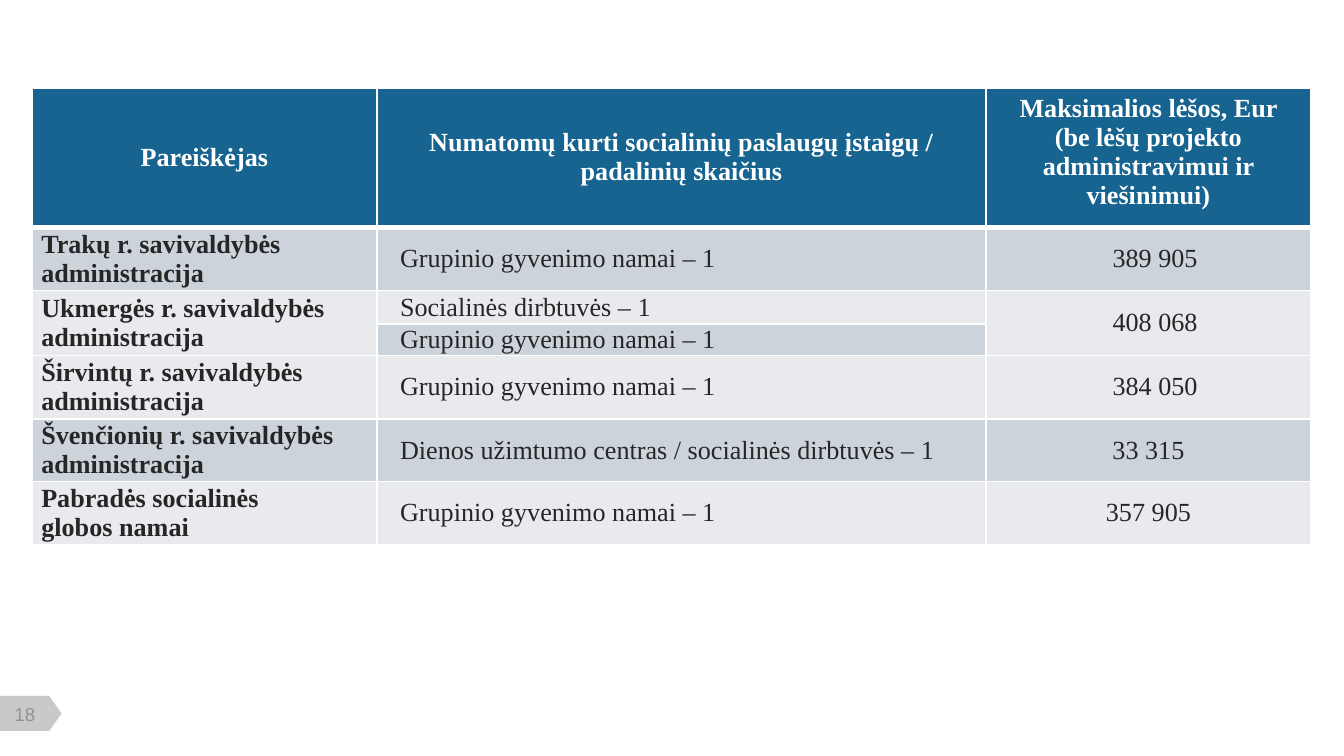
from lxml import etree
from pptx import Presentation
from pptx.dml.color import RGBColor
from pptx.enum.shapes import MSO_SHAPE
from pptx.enum.text import MSO_ANCHOR, PP_ALIGN
from pptx.oxml.ns import qn
from pptx.util import Cm, Pt

LEFT, CENTER = PP_ALIGN.LEFT, PP_ALIGN.CENTER
TOP, MIDDLE = MSO_ANCHOR.TOP, MSO_ANCHOR.MIDDLE
OFFPAGE = MSO_SHAPE.FLOWCHART_OFFPAGE_CONNECTOR
HEADER, DARK, LIGHT = "176490", "CCD3DB", "E8EAEE"
WHITE, INK = "FFFFFF", "262626"
INDENT = Cm(0.25)


def color(value):
    return RGBColor.from_string(value)


def add_border(cell, side, points):
    line = etree.SubElement(cell._tc.get_or_add_tcPr(), qn(f"a:ln{side}"), w=str(Pt(points)))
    fill = etree.SubElement(line, qn("a:solidFill"))
    etree.SubElement(fill, qn("a:srgbClr"), val=WHITE)


deck = Presentation()
deck.slide_width, deck.slide_height = Cm(25.4), Cm(14.29)
page = deck.slides.add_slide(deck.slide_layouts[6])

marker = page.shapes.add_shape(OFFPAGE, Cm(0.25), Cm(12.9), Cm(0.66), Cm(1.17))
marker.rotation = 270
marker.shadow.inherit = False
marker.fill.solid()
marker.fill.fore_color.rgb = color("C9C9C9")
marker.line.fill.background()

number = page.shapes.add_textbox(Cm(0.05), Cm(13.28), Cm(0.84), Cm(0.43)).text_frame
number.margin_left = number.margin_right = number.margin_top = number.margin_bottom = 0
number.word_wrap = True
number.vertical_anchor = MIDDLE
para = number.paragraphs[0]
para.text = "18"
para.alignment = CENTER
para.font.name, para.font.size = "Arial", Pt(10)
para.font.color.rgb = color("929292")

rows = [
    ("Pareiškėjas", "Numatomų kurti socialinių paslaugų įstaigų / padalinių skaičius",
     "Maksimalios lėšos, Eur (be lėšų projekto administravimui ir viešinimui)"),
    ("Trakų r. savivaldybės\nadministracija", "Grupinio gyvenimo namai – 1", "389 905"),
    ("Ukmergės r. savivaldybės\nadministracija", "Socialinės dirbtuvės – 1", "408 068"),
    ("", "Grupinio gyvenimo namai – 1", ""),
    ("Širvintų r. savivaldybės\nadministracija", "Grupinio gyvenimo namai – 1", "384 050"),
    ("Švenčionių r. savivaldybės\nadministracija",
     "Dienos užimtumo centras / socialinės dirbtuvės – 1", "33 315"),
    ("Pabradės socialinės\nglobos namai", "Grupinio gyvenimo namai – 1", "357 905"),
]
row_fills = [HEADER, DARK, LIGHT, DARK, LIGHT, DARK, LIGHT]
row_heights = [2.59, 1.2, 0.63, 0.59, 1.2, 1.18, 1.18]
column_widths = [6.53, 11.5, 6.15]
indented_amounts = {"389 905", "408 068", "384 050"}

table = page.shapes.add_table(
    len(rows), len(column_widths), Cm(0.6), Cm(1.66),
    Cm(sum(column_widths)), Cm(sum(row_heights))).table
for column, width in zip(table.columns, column_widths):
    column.width = Cm(width)
for row, height in zip(table.rows, row_heights):
    row.height = Cm(height)
for c in (0, 2):
    table.cell(2, c).merge(table.cell(3, c))

for r, texts in enumerate(rows):
    for c, text in enumerate(texts):
        cell = table.cell(r, c)
        is_header = r == 0
        for side in "LRTB":
            thick = (r, side) in ((0, "B"), (1, "T"))
            add_border(cell, side, 3 if thick else 1)
        cell.fill.solid()
        cell.fill.fore_color.rgb = color(LIGHT if cell.is_spanned else row_fills[r])
        roomy = is_header and c == 2
        cell.margin_left = cell.margin_right = Cm(0.25 if roomy else 0.18)
        cell.margin_top = cell.margin_bottom = Cm(0.13 if roomy else 0)
        cell.vertical_anchor = TOP if roomy else MIDDLE
        cell.text = text
        for para in cell.text_frame.paragraphs:
            para.alignment = CENTER if is_header or c == 2 else LEFT
            if not is_header and (c == 1 or text in indented_amounts):
                para._p.get_or_add_pPr().set("marL", str(INDENT))
            para.font.name, para.font.size = "Times New Roman", Pt(14)
            para.font.bold = is_header or c == 0
            para.font.color.rgb = color(WHITE if is_header else INK)

deck.save("out.pptx")
